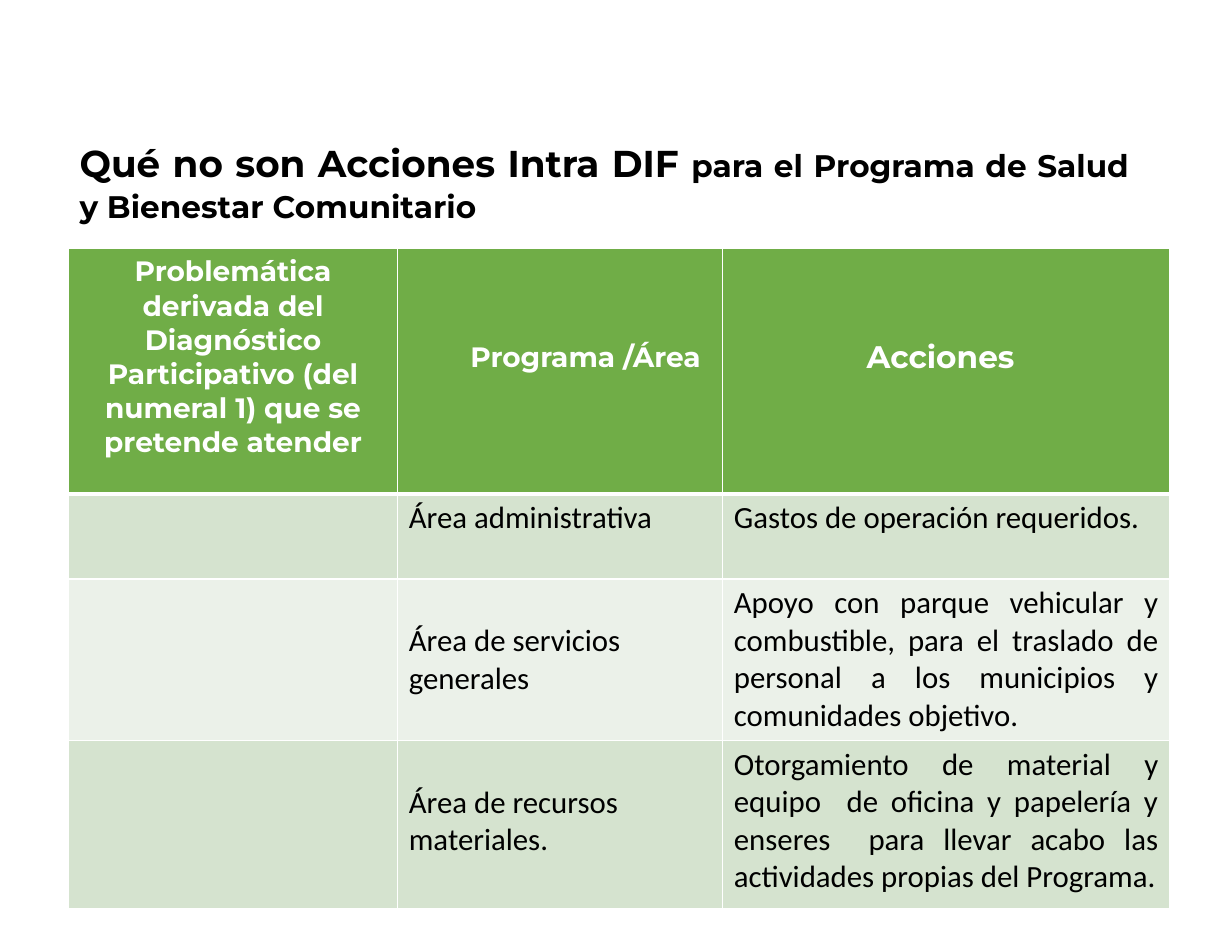
from pptx import Presentation
from pptx.dml.color import RGBColor as Rgb
from pptx.enum.text import MSO_ANCHOR as Anchor, MSO_AUTO_SIZE as Auto, PP_ALIGN as Align
from pptx.oxml import parse_xml as make
from pptx.oxml.ns import nsdecls
from pptx.util import Cm, Pt

GREEN, WHITE, BLACK = "70AD47", "FFFFFF", "000000"
BANDS = ("D5E3CF", "EBF1E9")
COLS = (7.47, 7.37, 10.13)
ROWS = (5.56, 1.93, 3.61, 3.81)
# Header: text, size, left and right margin
HEADS = (
    ("Problemática derivada del Diagnóstico Participativo (del numeral 1) "
     "que se pretende atender", 18, 0.25, 0.25),
    ("Programa /Área", 18, 1.4, 0.25),
    ("Acciones", 20, 0.25, 0.5),
)
# Body: area, its top margin, action
BODY = (
    ("Área administrativa", 0.13, "Gastos de operación requeridos."),
    ("Área de servicios generales", 0.99,
     "Apoyo con parque vehicular y combustible, para el traslado de personal "
     "a los municipios y comunidades objetivo."),
    ("Área de recursos materiales.", 0.99,
     "Otorgamiento de material y equipo  de oficina y papelería y enseres  "
     "para llevar acabo las actividades propias del Programa."),
)


def style(run, size, face, color, bold):
    font = run.font
    font.size, font.name, font.bold = Pt(size), face, bold
    font.color.rgb = Rgb.from_string(color)


def paint(cell, color, base=1):
    """Fill a cell and give it white borders."""
    for side in ("L", "R", "T", "B"):
        width = Pt(base if side == "B" else 1)
        cell._tc.get_or_add_tcPr().append(make(
            f'<a:ln{side} {nsdecls("a")} w="{width}"><a:solidFill>'
            f'<a:srgbClr val="{WHITE}"/></a:solidFill></a:ln{side}>'))
    cell.fill.solid()
    cell.fill.fore_color.rgb = Rgb.from_string(color)


def write(cell, text, size, face, color, bold, align):
    cell.text_frame.text = text
    para = cell.text_frame.paragraphs[0]
    para.alignment = align
    style(para.runs[0], size, face, color, bold)


def add_title(slide):
    box = slide.shapes.title
    box.left, box.top, box.width, box.height = Cm(1.55), Cm(2.97), Cm(24.31), Cm(2.26)
    frame = box.text_frame
    frame.word_wrap, frame.auto_size = True, Auto.NONE
    frame.vertical_anchor = Anchor.TOP
    para = frame.paragraphs[0]
    para.alignment, para.line_spacing = Align.JUSTIFY, 1.07
    para.space_after = Pt(6)
    for text, size in (("Qué no son Acciones Intra DIF ", 24),
                       ("para el Programa de Salud y Bienestar Comunitario", 20)):
        run = para.add_run()
        run.text = text
        style(run, size, "Montserrat", BLACK, True)


def add_grid(slide):
    grid = slide.shapes.add_table(
        len(ROWS), len(COLS), Cm(1.55), Cm(5.64), Cm(sum(COLS)), Cm(sum(ROWS))).table
    for col, width in zip(grid.columns, COLS):
        col.width = Cm(width)
    for row, height in zip(grid.rows, ROWS):
        row.height = Cm(height)

    # Header row
    for cell, (text, size, left, right) in zip(grid.rows[0].cells, HEADS):
        paint(cell, GREEN, 3)
        write(cell, text, size, "Montserrat", WHITE, True, Align.CENTER)
        cell.vertical_anchor = Anchor.MIDDLE
        cell.margin_left, cell.margin_right = Cm(left), Cm(right)
        cell.margin_bottom = Cm(0.76)

    # Body rows, in two alternating tints
    for num, (area, top, action) in enumerate(BODY):
        cells = list(grid.rows[num + 1].cells)
        for cell in cells:
            paint(cell, BANDS[num % 2])
        write(cells[1], area, 19.8, "Calibri", BLACK, False, Align.LEFT)
        write(cells[2], action, 19.8, "Calibri", BLACK, False, Align.JUSTIFY)
        cells[1].margin_top = Cm(top)


def main():
    deck = Presentation()
    deck.slide_width, deck.slide_height = Cm(27.94), Cm(21.59)
    slide = deck.slides.add_slide(deck.slide_layouts[5])
    add_grid(slide)
    add_title(slide)
    deck.save("out.pptx")


if __name__ == "__main__":
    main()
